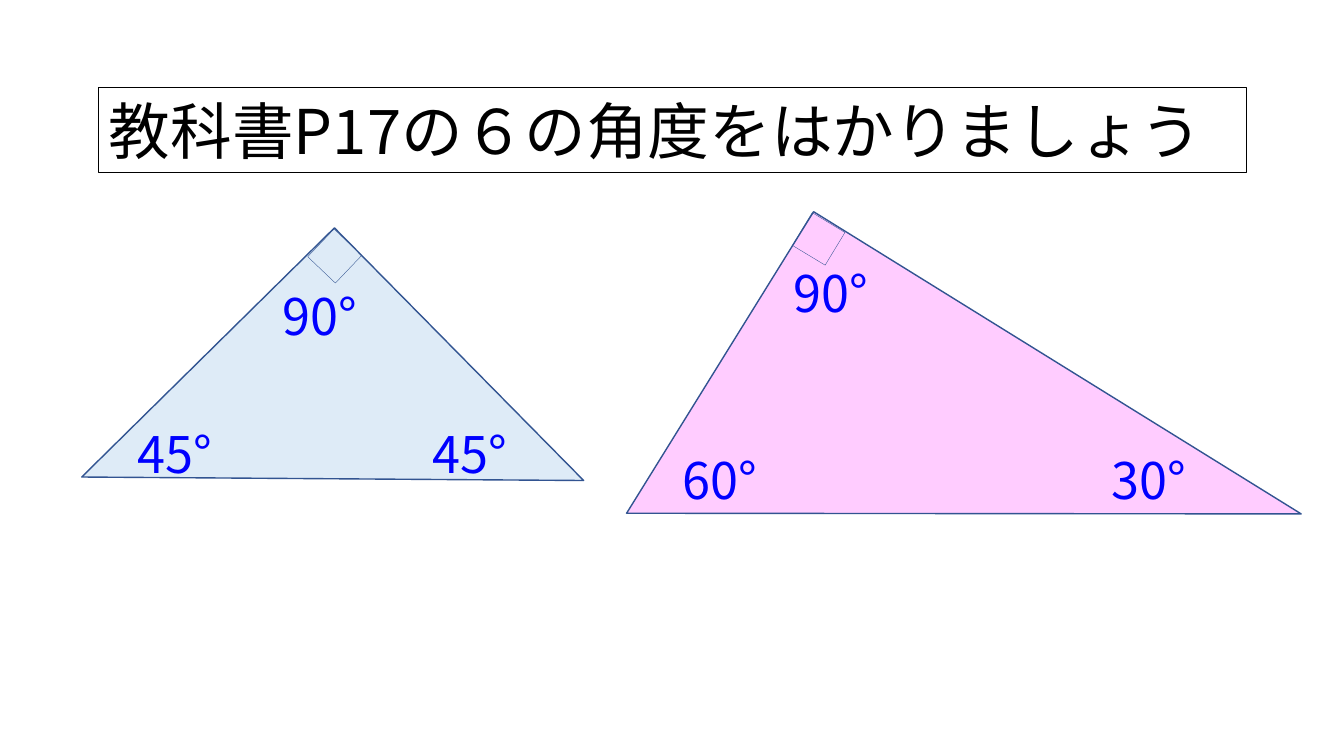
import pptx
import pptx.dml.color
import pptx.enum.shapes
import pptx.enum.text
import pptx.oxml
import pptx.oxml.ns
import pptx.util

SHAPE = pptx.enum.shapes.MSO_SHAPE
OUTLINE, ANGLE_COLOUR, TITLE_COLOUR = "325491", "0000FF", "000000"

# Frames are (left, top, width, height) in grid cells, turns in degrees.
TRIANGLES = [
    {
        "frame": (15.4, 29.9, 35.2, 35.2), "turn": 135.4, "fill": "DEEBF7",
        "corner": (31.3, 23.5), "corner_turn": 313.6,
        "angles": [("90°", 27, 27.7), ("45°", 12.7, 41.4), ("45°", 41.9, 41.4)],
    },
    {
        "frame": (78, 22.5, 35.2, 56.9), "turn": 121.8, "fill": "FFCCFF",
        "corner": (79.3, 21.8), "corner_turn": 301.2,
        "angles": [("90°", 77.7, 25.5), ("60°", 66.7, 44), ("30°", 109.3, 44)],
    },
]


def colour(value):
    return pptx.dml.color.RGBColor.from_string(value)


class AngleSlide:
    """Draws on a grid whose cells are a tenth of an inch wide and high."""

    font = "Noto Sans CJK JP"
    cell = 0.1
    corner_size = 3.8
    label_size = (14.2, 7.1)

    def __init__(self, deck):
        self.slide = deck.slides.add_slide(deck.slide_layouts[5])

    def place(self, *cells):
        return [pptx.util.Inches(count * self.cell) for count in cells]

    def outline(self, shape, line_colour, width):
        shape.line.color.rgb = colour(line_colour)
        shape.line.width = pptx.util.Pt(width)

    def set_text(self, shape, words, size, text_colour):
        frame = shape.text_frame
        frame.text = words
        frame.word_wrap = False
        frame.auto_size = pptx.enum.text.MSO_AUTO_SIZE.NONE
        frame.vertical_anchor = pptx.enum.text.MSO_ANCHOR.MIDDLE
        paragraph = frame.paragraphs[0]
        paragraph.alignment = pptx.enum.text.PP_ALIGN.LEFT
        paragraph.font.size = pptx.util.Pt(size)
        paragraph.font.color.rgb = colour(text_colour)
        paragraph.font.name = self.font
        # East Asian characters take their typeface from a:ea.
        latin = paragraph._p.pPr.find(".//" + pptx.oxml.ns.qn("a:latin"))
        latin.addnext(pptx.oxml.parse_xml(
            f'<a:ea {pptx.oxml.ns.nsdecls("a")} typeface="{self.font}"/>'))

    def title(self, words, *cells):
        heading = self.slide.shapes.title
        heading.left, heading.top, heading.width, heading.height = self.place(*cells)
        self.outline(heading, TITLE_COLOUR, 0.75)
        self.set_text(heading, words, 44, TITLE_COLOUR)

    def figure(self, kind, cells, turn, line_width, fill=None):
        shape = self.slide.shapes.add_shape(kind, *self.place(*cells))
        shape.rotation = turn
        shape.shadow.inherit = False
        if fill:
            shape.fill.solid()
            shape.fill.fore_color.rgb = colour(fill)
        else:
            shape.fill.background()
        self.outline(shape, OUTLINE, line_width)

    def angle(self, words, left, top):
        label = self.slide.shapes.add_textbox(*self.place(left, top, *self.label_size))
        self.set_text(label, words, 36, ANGLE_COLOUR)

    def triangle(self, frame, turn, fill, corner, corner_turn, angles):
        """Draw a right triangle with its right-angle mark and its three angles."""
        self.figure(SHAPE.RIGHT_TRIANGLE, frame, turn, 1, fill)
        mark = (*corner, self.corner_size, self.corner_size)
        self.figure(SHAPE.RECTANGLE, mark, corner_turn, 0.25)
        for angle in angles:
            self.angle(*angle)


def main():
    deck = pptx.Presentation()
    deck.slide_width = pptx.util.Inches(13.33)
    deck.slide_height = pptx.util.Inches(7.5)
    lesson = AngleSlide(deck)
    lesson.title("教科書P17の６の角度をはかりましょう", 9.8, 8.7, 113.8, 8.4)
    for triangle in TRIANGLES:
        lesson.triangle(**triangle)
    deck.save("out.pptx")


if __name__ == "__main__":
    main()
